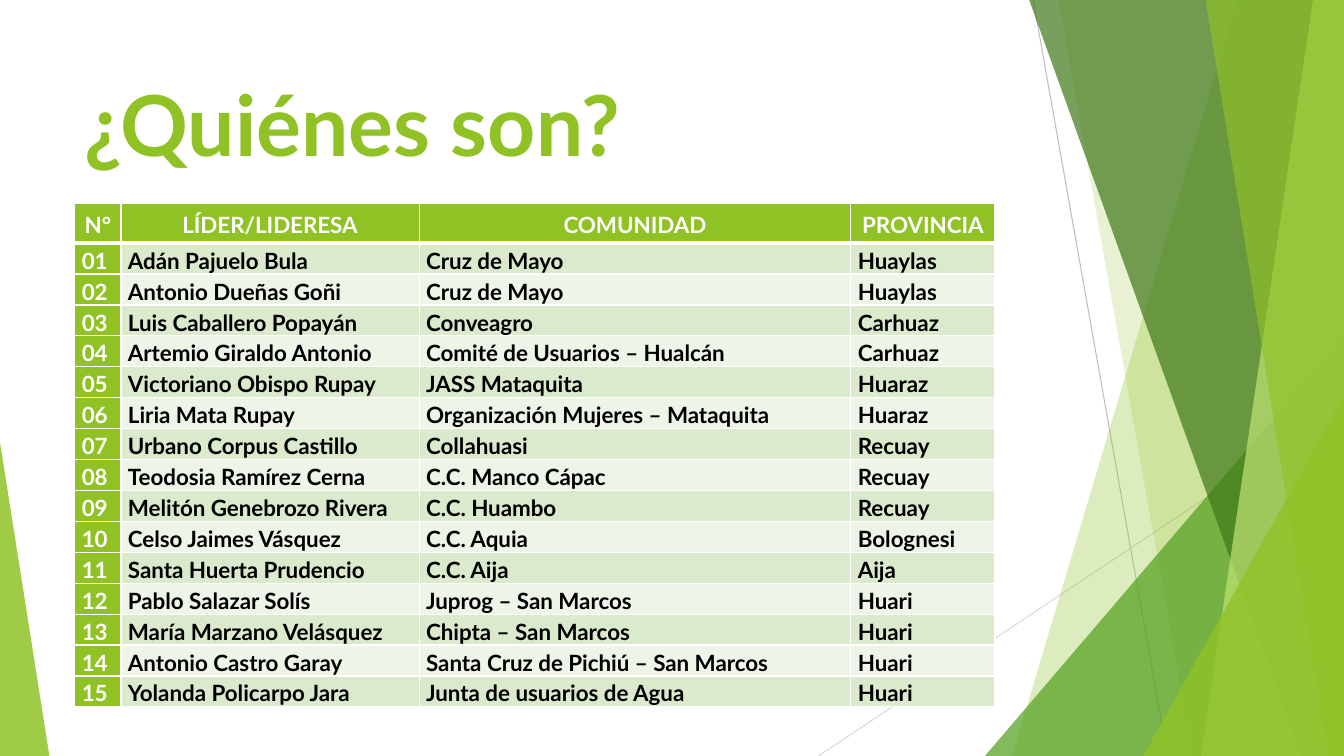
from dataclasses import dataclass

from lxml.etree import SubElement
from pptx import Presentation
from pptx.dml.color import RGBColor
from pptx.dml.fill import FillFormat
from pptx.enum.shapes import MSO_CONNECTOR, MSO_SHAPE
from pptx.enum.text import MSO_ANCHOR, PP_ALIGN
from pptx.oxml.ns import qn
from pptx.slide import Slide
from pptx.table import _Cell
from pptx.text.text import Font
from pptx.util import Pt

WIDTH, HEIGHT = 960, 540
FONT = "Lato"
GREEN, WHITE, BLACK = "90C226", "FFFFFF", "000000"
BANDS = ("DBE9CD", "EEF4E8")


@dataclass
class Ray:
    start: tuple[float, float]
    end: tuple[float, float]
    color: str


@dataclass
class Panel:
    """A band from the top to the bottom of the slide, filled up to its right edge."""
    top_x: float
    bottom_x: float
    color: str
    opacity: int


@dataclass
class Corner:
    """A right triangle standing on the bottom edge of the slide."""
    left: float
    top: float
    width: float
    apex: float
    color: str
    opacity: int


RAYS = [
    Ray((738, 0), (834, HEIGHT), "BFBFBF"),
    Ray((WIDTH, 290), (584.6, HEIGHT), "D9D9D9"),
]
FACETS = [
    Panel(884, 723, GREEN, 30),
    Panel(756, 852, GREEN, 20),
    Corner(703.5, 240, 256.5, 1, "54A021", 72),
    Panel(735, 929.5, "3F7819", 70),
    Panel(938, 858, "C0E474", 70),
    Panel(861, 949, GREEN, 65),
    Corner(816.5, 283, 143.5, 1, GREEN, 80),
    Corner(0, 316, 35.3, 0, GREEN, 85),
]

HEADINGS = ("N°", "LÍDER/LIDERESA", "COMUNIDAD", "PROVINCIA")
COLUMN_WIDTHS = (33, 213, 308.4, 103)
HEADER_HEIGHT, ROW_HEIGHT = 28.5, 22
LEADERS = [
    ("Adán Pajuelo Bula", "Cruz de Mayo", "Huaylas"),
    ("Antonio Dueñas Goñi", "Cruz de Mayo", "Huaylas"),
    ("Luis Caballero Popayán", "Conveagro", "Carhuaz"),
    ("Artemio Giraldo Antonio", "Comité de Usuarios – Hualcán", "Carhuaz"),
    ("Victoriano Obispo Rupay", "JASS Mataquita", "Huaraz"),
    ("Liria Mata Rupay", "Organización Mujeres – Mataquita", "Huaraz"),
    ("Urbano Corpus Castillo", "Collahuasi", "Recuay"),
    ("Teodosia Ramírez Cerna", "C.C. Manco Cápac", "Recuay"),
    ("Melitón Genebrozo Rivera", "C.C. Huambo", "Recuay"),
    ("Celso Jaimes Vásquez", "C.C. Aquia", "Bolognesi"),
    ("Santa Huerta Prudencio", "C.C. Aija", "Aija"),
    ("Pablo Salazar Solís", "Juprog – San Marcos", "Huari"),
    ("María Marzano Velásquez", "Chipta – San Marcos", "Huari"),
    ("Antonio Castro Garay", "Santa Cruz de Pichiú – San Marcos", "Huari"),
    ("Yolanda Policarpo Jara", "Junta de usuarios de Agua", "Huari"),
]


def rgb(color: str) -> RGBColor:
    return RGBColor.from_string(color)


def set_fill(fill: FillFormat, color: str) -> None:
    fill.solid()
    fill.fore_color.rgb = rgb(color)


def set_font(font: Font, size: float, color: str) -> None:
    font.name = FONT
    font.size = Pt(size)
    font.bold = True
    font.color.rgb = rgb(color)


def draw_ray(slide: Slide, ray: Ray) -> None:
    line = slide.shapes.add_connector(
        MSO_CONNECTOR.STRAIGHT, *map(Pt, ray.start + ray.end))
    line.line.color.rgb = rgb(ray.color)
    line.line.width = Pt(0.75)
    SubElement(line._element.spPr, qn("a:effectLst"))


def draw_facet(slide: Slide, facet: Panel | Corner) -> None:
    if isinstance(facet, Panel):
        outline = slide.shapes.build_freeform(Pt(facet.top_x), Pt(-0.5))
        outline.add_line_segments([
            (Pt(WIDTH), Pt(-0.5)),
            (Pt(WIDTH), Pt(HEIGHT)),
            (Pt(facet.bottom_x), Pt(HEIGHT)),
        ])
        shape = outline.convert_to_shape()
    else:
        shape = slide.shapes.add_shape(
            MSO_SHAPE.ISOSCELES_TRIANGLE, Pt(facet.left), Pt(facet.top),
            Pt(facet.width), Pt(HEIGHT - facet.top))
        shape.adjustments[0] = facet.apex
    shape.shadow.inherit = False
    shape.line.fill.background()
    set_fill(shape.fill, facet.color)
    color = shape._element.spPr.find(f"{qn('a:solidFill')}/{qn('a:srgbClr')}")
    SubElement(color, qn("a:alpha"), val=str(facet.opacity * 1000))


def draw_title(slide: Slide) -> None:
    title = slide.shapes.add_textbox(Pt(53.3), Pt(48.2), Pt(676.8), Pt(103.7))
    frame = title.text_frame
    frame.word_wrap = True
    frame.vertical_anchor = MSO_ANCHOR.TOP
    frame.text = "¿Quiénes son?"
    set_font(frame.paragraphs[0].runs[0].font, 60, GREEN)


def set_borders(cell: _Cell, top: float, bottom: float) -> None:
    properties = cell._tc.get_or_add_tcPr()
    for side, width in (("L", 1), ("R", 1), ("T", top), ("B", bottom)):
        border = SubElement(properties, qn(f"a:ln{side}"), w=str(Pt(width)))
        fill = SubElement(border, qn("a:solidFill"))
        SubElement(fill, qn("a:srgbClr"), val=WHITE)


def fill_cell(cell: _Cell, text: str, row: int, column: int) -> None:
    is_header = row == 0
    is_green = is_header or column == 0
    set_borders(cell, top=3 if row == 1 else 1, bottom=3 if is_header else 1)
    set_fill(cell.fill, GREEN if is_green else BANDS[(row - 1) % 2])
    cell.margin_left = cell.margin_right = Pt(5)
    cell.margin_top = cell.margin_bottom = Pt(0)
    cell.vertical_anchor = MSO_ANCHOR.MIDDLE if is_header else MSO_ANCHOR.TOP
    cell.text_frame.text = text
    paragraph = cell.text_frame.paragraphs[0]
    paragraph.line_spacing = 1.15
    paragraph.alignment = PP_ALIGN.CENTER if is_header else PP_ALIGN.LEFT
    set_font(paragraph.runs[0].font, 16, WHITE if is_green else BLACK)


def draw_leaders(slide: Slide) -> None:
    records = [HEADINGS] + [
        (f"{number:02}", *leader) for number, leader in enumerate(LEADERS, 1)]
    table = slide.shapes.add_table(
        len(records), len(HEADINGS), Pt(53.4), Pt(145.2), Pt(sum(COLUMN_WIDTHS)),
        Pt(HEADER_HEIGHT + ROW_HEIGHT * len(LEADERS))).table
    for column, width in zip(table.columns, COLUMN_WIDTHS):
        column.width = Pt(width)
    for row, record in enumerate(records):
        table.rows[row].height = Pt(ROW_HEIGHT if row else HEADER_HEIGHT)
        for column, text in enumerate(record):
            fill_cell(table.cell(row, column), text, row, column)


def main() -> None:
    presentation = Presentation()
    presentation.slide_width, presentation.slide_height = Pt(WIDTH), Pt(HEIGHT)
    slide = presentation.slides.add_slide(presentation.slide_layouts[6])
    set_fill(slide.background.fill, WHITE)
    for ray in RAYS:
        draw_ray(slide, ray)
    for facet in FACETS:
        draw_facet(slide, facet)
    draw_title(slide)
    draw_leaders(slide)
    presentation.save("out.pptx")


if __name__ == "__main__":
    main()
